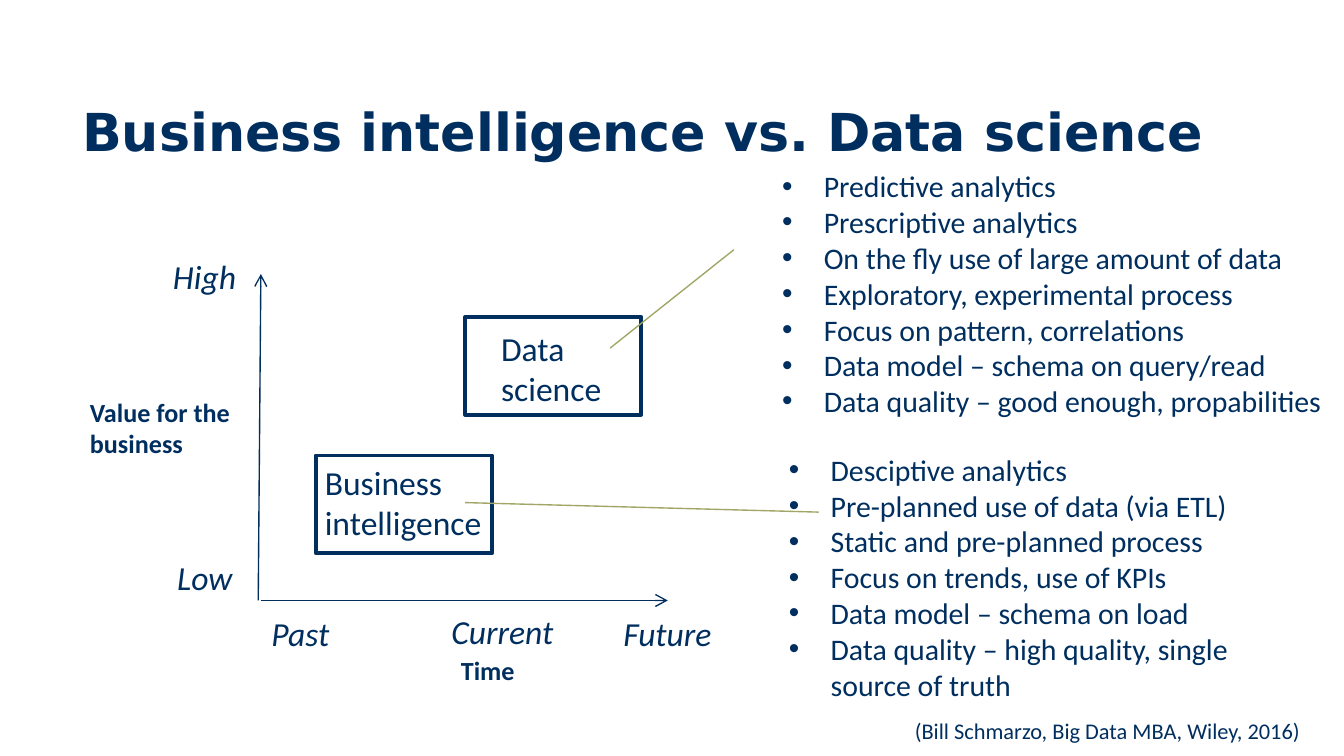
from dataclasses import dataclass, field

from lxml import etree
from pptx import Presentation
from pptx import util as u
from pptx.dml.color import RGBColor
from pptx.enum import shapes, text
from pptx.oxml.ns import qn

NAVY, AXIS_NAVY, OLIVE, WHITE = "002F5F", "002E5D", "A1A667", "FFFFFF"
BODY = {"name": "Calibri", "size": u.Pt(18)}
SCALE = BODY | {"italic": True}
AXIS_TITLE = BODY | {"size": u.Pt(14), "bold": True}
LIST = BODY | {"size": u.Pt(16)}
CITATION = BODY | {"size": u.Pt(12)}
TITLE = {"name": "DejaVu Sans", "size": u.Pt(28), "bold": True}
BULLET_INDENT = u.Cm(0.79)


@dataclass
class Label:
    """Text with its place in centimetres: left, top, width, height."""
    lines: list[str]
    place: tuple[float, float, float, float]
    style: dict = field(default_factory=lambda: BODY)
    bulleted: bool = False
    wrap: bool = True


@dataclass
class Line:
    """Straight line in centimetres; an arrowhead sits at its start."""
    start: tuple[float, float]
    end: tuple[float, float]
    color: str
    arrow: bool = False


def rgb(color: str) -> RGBColor:
    return RGBColor.from_string(color)


def cm(values) -> list[u.Length]:
    return [u.Cm(value) for value in values]


def format_font(font, style: dict) -> None:
    for name, value in style.items():
        setattr(font, name, value)
    font.color.rgb = rgb(NAVY)


def add_bullet(paragraph) -> None:
    properties = paragraph._p.get_or_add_pPr()
    properties.set("marL", str(BULLET_INDENT))
    properties.set("indent", str(-BULLET_INDENT))
    etree.SubElement(properties, qn("a:buFont")).set("typeface", "Arial")
    etree.SubElement(properties, qn("a:buChar")).set("char", "•")


def draw_label(slide, label: Label) -> None:
    frame = slide.shapes.add_textbox(*cm(label.place)).text_frame
    frame.word_wrap = label.wrap
    frame.auto_size = text.MSO_AUTO_SIZE.SHAPE_TO_FIT_TEXT
    frame.text = "\n".join(label.lines)
    for paragraph in frame.paragraphs:
        if label.bulleted:
            add_bullet(paragraph)
        format_font(paragraph.runs[0].font, label.style)


def draw_box(slide, left: float, top: float) -> None:
    box = slide.shapes.add_shape(shapes.MSO_SHAPE.RECTANGLE,
                                 *cm((left, top, 3.33, 1.85)))
    box.shadow.inherit = False
    box.fill.solid()
    box.fill.fore_color.rgb = rgb(WHITE)
    box.line.color.rgb = rgb(NAVY)
    box.line.width = u.Pt(2)


def draw_line(slide, line: Line) -> None:
    connector = slide.shapes.add_connector(
        shapes.MSO_CONNECTOR.STRAIGHT, *cm(line.start + line.end))
    connector.line.color.rgb = rgb(line.color)
    connector.line.width = u.Pt(0.75)
    if line.arrow:
        outline = connector.line._get_or_add_ln()
        etree.SubElement(outline, qn("a:headEnd")).set("type", "arrow")
    etree.SubElement(connector._element.spPr, qn("a:effectLst"))


AXES = [
    Line((4.93, 5.18), (4.88, 11.35), AXIS_NAVY, arrow=True),
    Line((12.62, 11.35), (4.93, 11.35), AXIS_NAVY, arrow=True),
]
AXIS_LABELS = [
    Label(["Value for the business"], (1.45, 7.37, 3.18, 1.45), AXIS_TITLE),
    Label(["High"], (3.02, 4.72, 2.06, 1.02), SCALE),
    Label(["Low"], (3.1, 10.41, 2.06, 1.02), SCALE),
    Label(["Past"], (4.88, 11.46, 3.1, 1.02), SCALE),
    Label(["Current"], (8.28, 11.43, 3.1, 1.02), SCALE),
    Label(["Future"], (11.53, 11.46, 3.1, 1.02), SCALE),
    Label(["Time"], (8.46, 12.24, 4.29, 0.86), AXIS_TITLE),
]
# Each field: box corner, name, link to its list, list of traits
FIELDS = [
    ((5.97, 8.61),
     Label(["Business intelligence"], (5.89, 8.61, 4.22, 1.8)),
     Line((8.79, 9.5), (15.47, 9.68), OLIVE),
     Label(["Desciptive analytics",
            "Pre-planned use of data (via ETL)",
            "Static and pre-planned process",
            "Focus on trends, use of KPIs",
            "Data model – schema on load",
            "Data quality – high quality, single source of truth"],
           (14.66, 8.41, 10.26, 5.05), LIST, bulleted=True)),
    ((8.79, 5.99),
     Label(["Data science"], (9.22, 6.07, 3.4, 1.8)),
     Line((11.53, 6.58), (13.87, 4.72), OLIVE),
     Label(["Predictive analytics",
            "Prescriptive analytics",
            "On the fly use of large amount of data",
            "Exploratory, experimental process",
            "Focus on pattern, correlations",
            "Data model – schema on query/read",
            "Data quality – good enough, propabilities"],
           (14.53, 3.05, 11.1, 5.74), LIST, bulleted=True)),
]
SOURCE = Label(["(Bill Schmarzo, Big Data MBA, Wiley, 2016)"],
               (17.04, 13.44, 7.87, 0.76), CITATION, wrap=False)


def main() -> None:
    deck = Presentation()
    deck.slide_width, deck.slide_height = cm((25.4, 14.29))
    slide = deck.slides.add_slide(deck.slide_layouts[5])

    # Title
    title = slide.shapes.title
    title.left, title.top, title.width, title.height = cm(
        (1.3, 1.65, 22.02, 1.65))
    title.text_frame.text = "Business intelligence vs. Data science"
    title.text_frame.vertical_anchor = text.MSO_ANCHOR.MIDDLE
    heading = title.text_frame.paragraphs[0]
    heading.alignment = text.PP_ALIGN.LEFT
    format_font(heading.runs[0].font, TITLE)

    # Axes and their labels
    for axis in AXES:
        draw_line(slide, axis)
    for label in AXIS_LABELS:
        draw_label(slide, label)

    # The two fields with their traits
    for corner, name, link, traits in FIELDS:
        draw_box(slide, *corner)
        draw_label(slide, name)
        draw_line(slide, link)
        draw_label(slide, traits)

    # Citation
    draw_label(slide, SOURCE)
    deck.save("out.pptx")


if __name__ == "__main__":
    main()
